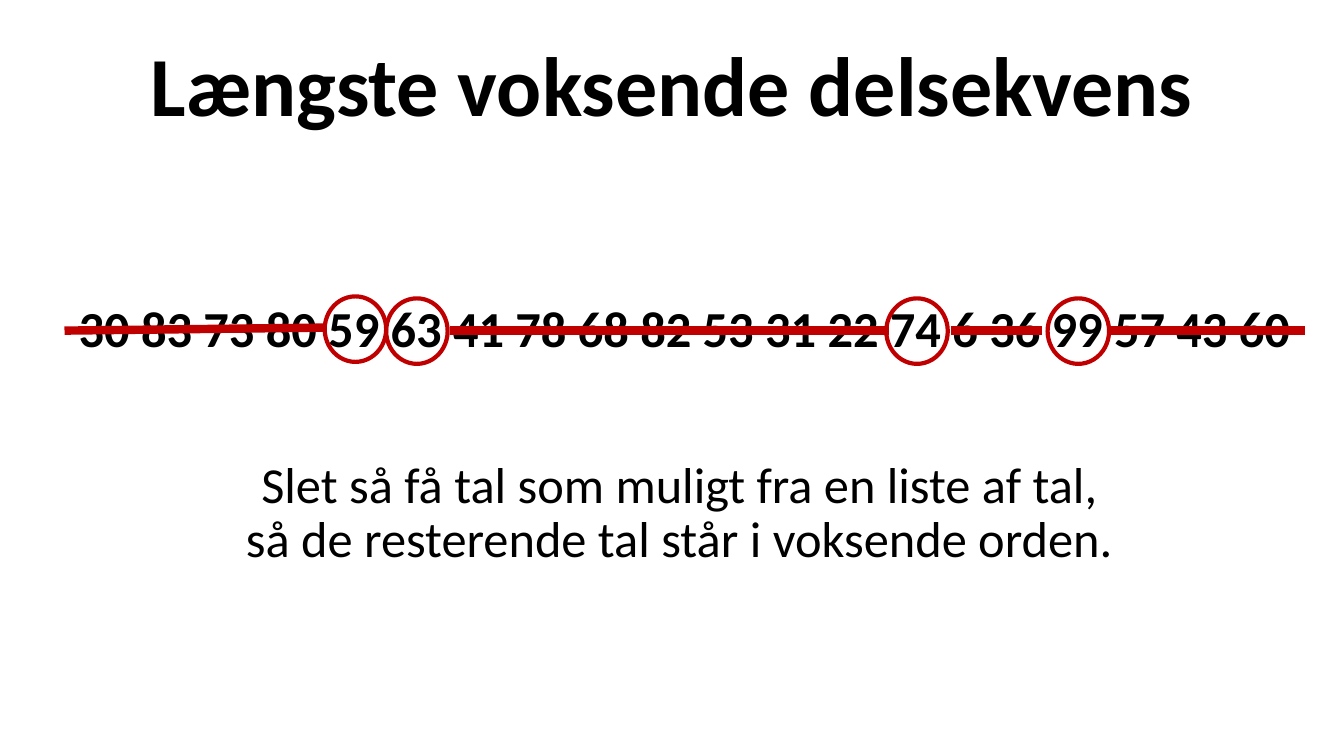
"""Build the slide on the longest increasing subsequence."""
from pptx import Presentation
from pptx.dml.color import RGBColor
from pptx.enum.shapes import MSO_CONNECTOR, MSO_SHAPE
from pptx.enum.text import MSO_ANCHOR, PP_ALIGN
from pptx.oxml.ns import qn
from pptx.util import Pt
from lxml import etree

PX = 9144
BLACK = RGBColor(0, 0, 0)
RED = RGBColor(0xC0, 0, 0)
LINE = MSO_CONNECTOR.STRAIGHT
OVAL = MSO_SHAPE.OVAL
CENTER = PP_ALIGN.CENTER
TOP, BOTTOM = MSO_ANCHOR.TOP, MSO_ANCHOR.BOTTOM

deck = Presentation()
deck.slide_width, deck.slide_height = 1333 * PX, 750 * PX
slide = deck.slides.add_slide(deck.slide_layouts[6])
shapes = slide.shapes


def add_text(box, anchor, paras):
    frame = shapes.add_textbox(*(n * PX for n in box)).text_frame
    frame.word_wrap = True
    frame.vertical_anchor = anchor
    for i, (text, size, bold, before, after) in enumerate(paras):
        para = frame.add_paragraph() if i else frame.paragraphs[0]
        para.text = text
        form = {"alignment": CENTER, "line_spacing": 0.9,
                "space_before": Pt(before), "space_after": Pt(after)}
        for key, value in form.items():
            setattr(para, key, value)
        for run in para.runs:
            font = {"name": "Calibri", "size": Pt(size), "bold": bold}
            for key, value in font.items():
                setattr(run.font, key, value)
            run.font.color.rgb = BLACK


numbers = "30 83 73 80 59 63 41 78 68 82 53 31 22 74 6 36 99 57 43 60"
task = ("Slet så få tal som muligt fra en liste af tal, \v"
        "så de resterende tal står i voksende orden. ")
add_text((65, 297, 1229, 411), TOP,
         [(numbers, 36, True, 24, 24), (task, 36, False, 48, 0)])
add_text((0, -19, 1333, 158), BOTTOM,
         [("Længste voksende delsekvens", 60, True, 0, 0)])

for left, right, end in [(64, 322, 325), (446, 882, 328),
                         (943, 1033, 328), (1100, 1294, 328)]:
    strike = shapes.add_connector(
        LINE, left * PX, 328 * PX, right * PX, end * PX)
    strike.line.color.rgb = RED
    strike.line.width = Pt(6)
    etree.SubElement(strike._element.spPr, qn("a:effectLst"))

for left, top in [(322, 294), (383, 296), (879, 296), (1039, 296)]:
    ring = shapes.add_shape(OVAL, left * PX, top * PX, 61 * PX, 65 * PX)
    ring.shadow.inherit = False
    ring.fill.background()
    ring.line.color.rgb = RED
    ring.line.width = Pt(3)

deck.save("out.pptx")
